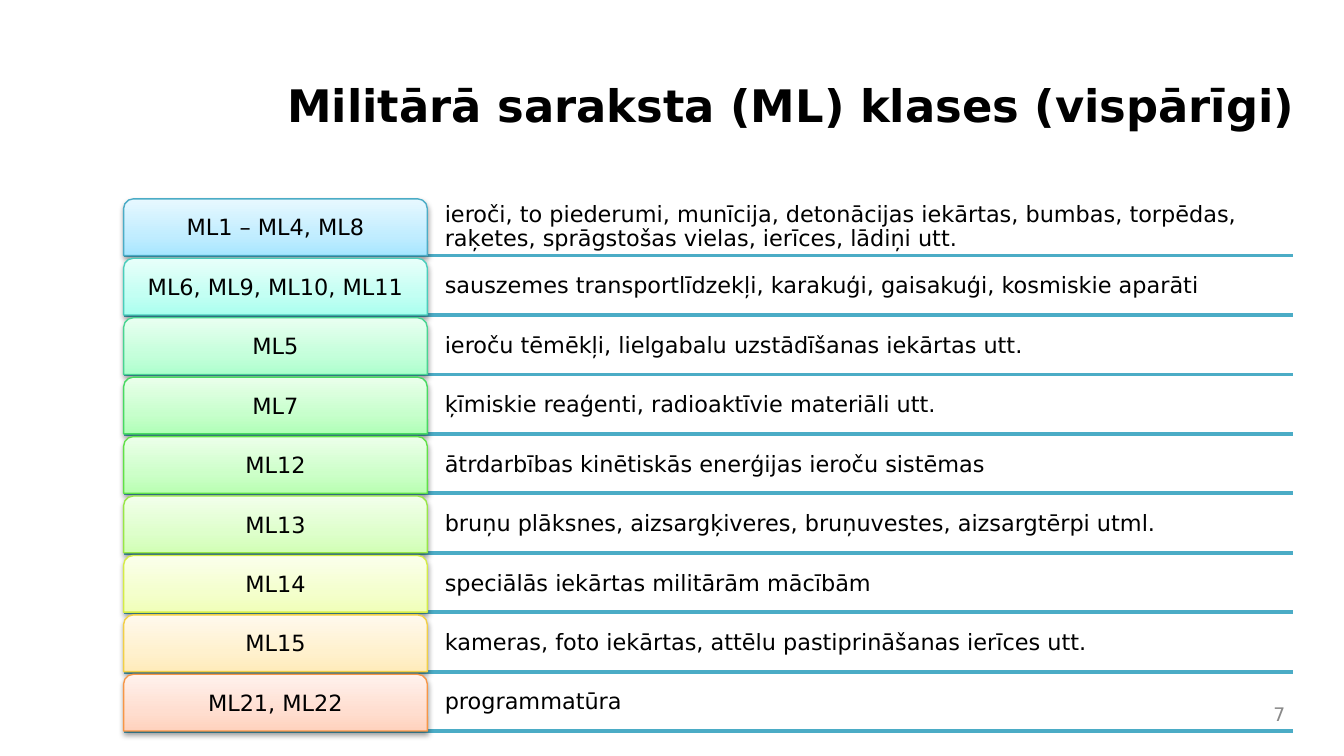
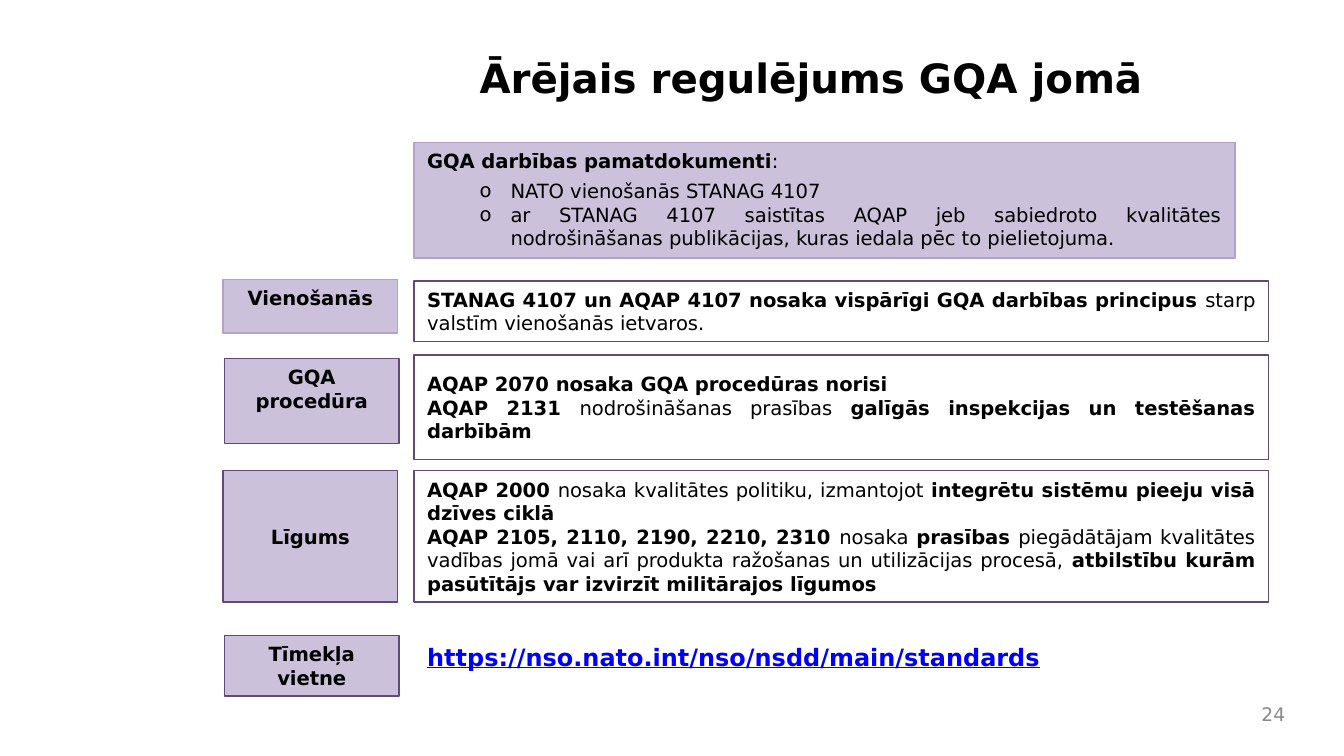
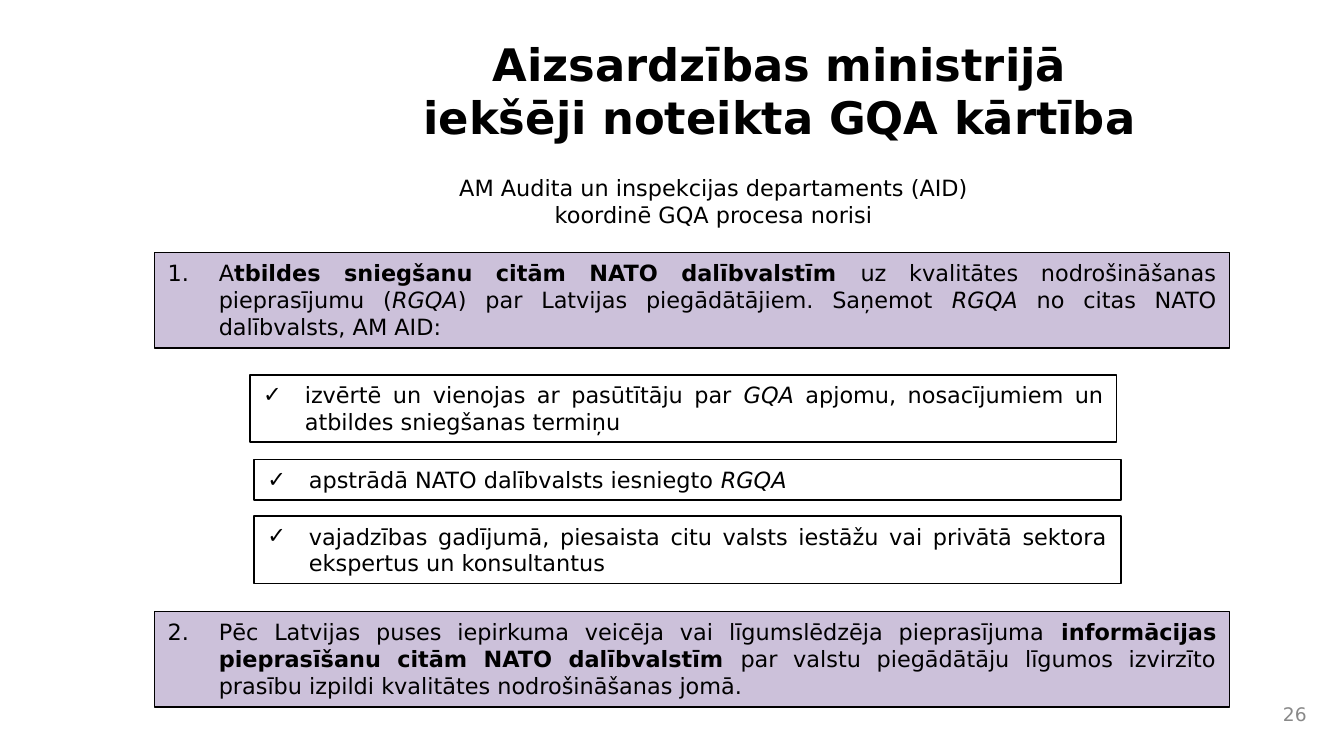
from dataclasses import dataclass

import pptx
import pptx.dml.color
import pptx.enum.shapes
import pptx.enum.text
import pptx.oxml.ns
import pptx.util
from lxml import etree

# Shared look
FONT = "DejaVu Sans"
BLACK, WHITE, GREY = "000000", "FFFFFF", "898989"
LILAC, LILAC_EDGE, PURPLE = "CCC1DA", "B3A2C7", "604A7B"
TEAL, LINK_BLUE = "4BACC6", "0000FF"

# Grid: 100 square columns across the slide, 56.25 rows down
SLIDE_WIDTH = pptx.util.Inches(10)
SLIDE_HEIGHT = SLIDE_WIDTH * 9 // 16
CELL = SLIDE_WIDTH / 100

ALIGN = pptx.enum.text.PP_ALIGN
ANCHOR = pptx.enum.text.MSO_ANCHOR
SHAPE = pptx.enum.shapes.MSO_SHAPE


@dataclass
class Para:
    """Spans are plain strings or (style letters, text) pairs."""
    spans: list
    align: object = ALIGN.JUSTIFY
    bullet: str = ""
    start: int = 0
    indent: float = 0
    hang: float = 0
    level: int = 0
    before: float = 0
    line_spacing: float = 0


def grid(cells):
    return pptx.util.Emu(round(cells * CELL))


def place(left, top, width, height):
    return [grid(cells) for cells in (left, top, width, height)]


def color(code):
    return pptx.dml.color.RGBColor.from_string(code)


def add_xml(parent, tag, **attributes):
    values = {name: str(value) for name, value in attributes.items()}
    return etree.SubElement(parent, pptx.oxml.ns.qn("a:" + tag), values)


def add_rgb(parent, code):
    return add_xml(parent, "srgbClr", val=code)


# Text
def set_bullet(para, item):
    properties = para._p.get_or_add_pPr()
    properties.set("marL", str(grid(item.indent)))
    properties.set("indent", str(-grid(item.hang)))
    if item.start:
        add_xml(properties, "buAutoNum", type="arabicPeriod", startAt=item.start)
    elif item.bullet:
        add_xml(properties, "buFont", typeface=FONT)
        add_xml(properties, "buChar", char=item.bullet)


def add_span(para, text, size, ink, style=""):
    span = para.add_run()
    span.text = text
    font = span.font
    font.name, font.size = FONT, pptx.util.Pt(size)
    font.color.rgb = color(ink)
    font.bold, font.italic, font.underline = ("b" in style, "i" in style, "u" in style)


def write(shape, items, size, ink=BLACK, anchor=ANCHOR.TOP, inset=None):
    frame = shape.text_frame
    frame.word_wrap = True
    frame.vertical_anchor = anchor
    side, edge = (1, 0.5) if inset is None else (inset, inset)
    frame.margin_left = frame.margin_right = grid(side)
    frame.margin_top = frame.margin_bottom = grid(edge)
    for index, item in enumerate(items):
        para = frame.add_paragraph() if index else frame.paragraphs[0]
        set_bullet(para, item)
        para.alignment = item.align
        para.level = item.level
        if item.before:
            para.space_before = pptx.util.Pt(item.before)
        if item.line_spacing:
            para.line_spacing = item.line_spacing
        for span in item.spans:
            style, text = ("", span) if isinstance(span, str) else span
            add_span(para, text, size, ink, style)


def add_text(page, area, items, size, **look):
    box = page.shapes.add_textbox(*place(*area))
    write(box, items, size, **look)


def add_title(page, area, lines, size, align=ALIGN.CENTER, anchor=ANCHOR.TOP):
    box = page.shapes.add_textbox(*place(*area))
    write(box, [Para([], align)], size, anchor=anchor)
    para = box.text_frame.paragraphs[0]
    for index, line in enumerate(lines):
        if index:
            para.add_line_break()
        add_span(para, line, size, BLACK, "b")


def add_page_number(page, number, right=96.6):
    add_text(page, (right - 4.8, 51.9, 4.8, 2.5), [Para([number], ALIGN.RIGHT)],
             10, ink=GREY, anchor=ANCHOR.MIDDLE)


# Shapes
def add_box(page, area, edge, fill=None, kind=SHAPE.RECTANGLE):
    box = page.shapes.add_shape(kind, *place(*area))
    box.shadow.inherit = False
    if fill:
        box.fill.solid()
        box.fill.fore_color.rgb = color(fill)
    else:
        box.fill.background()
    box.line.color.rgb = color(edge)
    box.line.width = pptx.util.Pt(0.75)
    return box


def add_panel(page, area, items, size, edge, fill=None, anchor=ANCHOR.TOP):
    write(add_box(page, area, edge, fill), items, size, anchor=anchor)


def add_rule(page, left, right, top):
    rule = page.shapes.add_connector(
        pptx.enum.shapes.MSO_CONNECTOR.STRAIGHT,
        grid(left), grid(top), grid(right), grid(top))
    rule.line.color.rgb = color(TEAL)
    rule.line.width = pptx.util.Pt(2)
    add_xml(rule._element.spPr, "effectLst")


def add_tab(page, area, label, edge, shades):
    tab = add_box(page, area, edge, kind=SHAPE.ROUND_2_SAME_RECTANGLE)
    tab.adjustments[0], tab.adjustments[1] = 0.17, 0
    properties = tab._element.spPr
    # Gradient running upwards
    tab.fill.gradient()
    gradient = properties.find(pptx.oxml.ns.qn("a:gradFill"))
    for child in list(gradient):
        gradient.remove(child)
    stops = add_xml(gradient, "gsLst")
    for percent, shade in zip((0, 35, 100), shades):
        add_rgb(add_xml(stops, "gs", pos=percent * 1000), shade)
    add_xml(gradient, "lin", ang=270 * 60000, scaled=0)
    # Soft shadow below
    effects = properties.find(pptx.oxml.ns.qn("a:effectLst"))
    shadow = add_xml(effects, "outerShdw", blurRad=pptx.util.Pt(3.1),
                     dist=pptx.util.Pt(1.6), dir=90 * 60000, rotWithShape=0)
    add_xml(add_rgb(shadow, BLACK), "alpha", val=38000)
    write(tab, [Para([label], ALIGN.CENTER, line_spacing=0.9)], 12,
          anchor=ANCHOR.MIDDLE, inset=0.3)


# Slide 1: list of classes
CLASSES = [
    ("ML1 – ML4, ML8",
     "ieroči, to piederumi, munīcija, detonācijas iekārtas, bumbas, torpēdas, "
     "raķetes, sprāgstošas vielas, ierīces, lādiņi utt.",
     TEAL, ("A7E6FF", "C1EDFF", "E7F8FF")),
    ("ML6, ML9, ML10, ML11",
     "sauszemes transportlīdzekļi, karakuģi, gaisakuģi, kosmiskie aparāti",
     "49CDBB", ("AAFFEF", "C3FFF3", "E8FFFA")),
    ("ML5", "ieroču tēmēkļi, lielgabalu uzstādīšanas iekārtas utt.",
     "48D491", ("ADFFCD", "C5FFDB", "E9FFF1")),
    ("ML7", "ķīmiskie reaģenti, radioaktīvie materiāli utt.",
     "47DA61", ("B0FFB7", "C7FFCC", "EAFFEB")),
    ("ML12", "ātrdarbības kinētiskās enerģijas ieroču sistēmas",
     "60E146", ("B9FFB2", "CDFFC9", "ECFFEA")),
    ("ML13", "bruņu plāksnes, aizsargķiveres, bruņuvestes, aizsargtērpi utml.",
     "98E746", ("D1FFB5", "DEFFCB", "F2FFEB")),
    ("ML14", "speciālās iekārtas militārām mācībām",
     "D5EC46", ("F0FFB8", "F4FFCD", "FBFFEC")),
    ("ML15", "kameras, foto iekārtas, attēlu pastiprināšanas ierīces utt.",
     "F2CF46", ("FFEBBA", "FFF1CE", "FFF9ED")),
    ("ML21, ML22", "programmatūra",
     "F79646", ("FFD2BD", "FFDED0", "FFF2ED")),
]


def build_classes(page):
    add_title(page, (20.4, 2, 78, 11.6), ["Militārā saraksta (ML) klases (vispārīgi)"],
              24, ALIGN.LEFT, ANCHOR.MIDDLE)
    left, top, right, list_height = 9.2, 14.8, 96.2, 39.6
    tab_width, gap = 22.6, 0.2
    pitch = (list_height + gap) / len(CLASSES)
    height = pitch - gap
    for row, (label, meaning, edge, shades) in enumerate(CLASSES):
        row_top = top + row * pitch
        add_rule(page, left, right, row_top + height)
        text_left = left + tab_width
        add_text(page, (text_left, row_top, right - text_left, height),
                 [Para([meaning], ALIGN.LEFT, indent=1, line_spacing=0.9)], 12,
                 anchor=ANCHOR.MIDDLE, inset=0.3)
        add_tab(page, (left, row_top, tab_width, height), label, edge, shades)
    add_page_number(page, "7")


# Slide 2: external regulation
def circle_item(text, before=0):
    return Para([text], bullet="o", indent=6.2, hang=2.3, level=1, before=before)


# Label, its left, top, width, height, edge and anchor
LABELS = [
    ("Vienošanās", (16.6, 20.8, 13, 4), LILAC_EDGE, ANCHOR.TOP),
    ("GQA procedūra", (16.7, 26.7, 13, 6.3), PURPLE, ANCHOR.TOP),
    ("Līgums", (16.6, 35, 13, 9.8), PURPLE, ANCHOR.MIDDLE),
    ("Tīmekļa vietne", (16.7, 47.3, 13, 4.5), PURPLE, ANCHOR.TOP),
]

# Top and height of each rule panel, and its text
RULES = [
    (20.9, 4.5, [
        Para([("b", "STANAG 4107 un AQAP 4107 nosaka vispārīgi GQA darbības principus "),
              "starp valstīm vienošanās ietvaros."])]),
    (26.4, 7.8, [
        Para([("b", "AQAP 2070 nosaka GQA procedūras norisi")]),
        Para([("b", "AQAP 2131 "), "nodrošināšanas prasības ",
              ("b", "galīgās inspekcijas un testēšanas darbībām")])]),
    (35, 9.8, [
        Para([("b", "AQAP 2000 "), "nosaka kvalitātes politiku, izmantojot ",
              ("b", "integrētu sistēmu pieeju visā dzīves ciklā")]),
        Para([("b", "AQAP 2105, 2110, 2190, 2210, 2310 "), "nosaka ", ("b", "prasības "),
              "piegādātājam kvalitātes vadības jomā vai arī produkta ražošanas un "
              "utilizācijas procesā, ",
              ("b", "atbilstību kurām pasūtītājs var izvirzīt militārajos līgumos")])]),
]


def build_regulation(page):
    column = 30.8
    add_title(page, (26.3, 3.5, 68.1, 4), ["Ārējais regulējums GQA jomā"], 21.6)
    add_panel(page, (column, 10.6, 61.1, 8.6), [
        Para([("b", "GQA darbības pamatdokumenti"), ":"]),
        circle_item("NATO vienošanās STANAG 4107", before=3.5),
        circle_item("ar STANAG 4107 saistītas AQAP jeb sabiedroto kvalitātes "
                    "nodrošināšanas publikācijas, kuras iedala pēc to pielietojuma."),
    ], 10.5, LILAC_EDGE, LILAC)
    for top, height, items in RULES:
        add_panel(page, (column, top, 63.6, height), items, 10.5, PURPLE,
                  anchor=ANCHOR.MIDDLE)
    for label, area, edge, anchor in LABELS:
        add_panel(page, area, [Para([("b", label)], ALIGN.CENTER)], 10.5, edge, LILAC,
                  anchor)
    add_text(page, (column, 47.3, 54.2, 3.2),
             [Para([("bu", "https://nso.nato.int/nso/nsdd/main/standards")], ALIGN.LEFT)],
             12.8, ink=LINK_BLUE)
    add_page_number(page, "24")


# Slide 3: internal procedure
DUTIES = [
    (18.8, ["A", ("b", "tbildes sniegšanu citām NATO dalībvalstīm "),
            "uz kvalitātes nodrošināšanas pieprasījumu (", ("i", "RGQA"),
            ") par Latvijas piegādātājiem. Saņemot ", ("i", "RGQA "),
            "no citas NATO dalībvalsts, AM AID:"]),
    (45.5, ["Pēc Latvijas puses iepirkuma veicēja vai līgumslēdzēja pieprasījuma ",
            ("b", "informācijas pieprasīšanu citām NATO dalībvalstīm "),
            "par valstu piegādātāju līgumos izvirzīto prasību izpildi kvalitātes "
            "nodrošināšanas jomā."]),
]

# Left, top and height of each step, and its text
STEPS = [
    (18.6, 27.9, 5, ["izvērtē un vienojas ar pasūtītāju par ", ("i", "GQA"),
                     " apjomu, nosacījumiem un atbildes sniegšanas termiņu"]),
    (18.9, 34.2, 3, ["apstrādā NATO dalībvalsts iesniegto ", ("i", "RGQA")]),
    (18.9, 38.4, 5, ["vajadzības gadījumā, piesaista citu valsts iestāžu vai privātā "
                     "sektora ekspertus un konsultantus"]),
]


def build_procedure(page):
    add_title(page, (22.7, 2.2, 70.6, 9.1),
              ["Aizsardzības ministrijā", "iekšēji noteikta GQA kārtība"], 24)
    add_panel(page, (22.7, 12.5, 60.8, 5), [
        Para(["AM Audita un inspekcijas departaments (AID)"], ALIGN.CENTER),
        Para(["koordinē GQA procesa norisi"], ALIGN.CENTER),
    ], 12, WHITE, WHITE)
    for number, (top, spans) in enumerate(DUTIES, 1):
        add_panel(page, (11.5, top, 80, 7.1),
                  [Para(spans, start=number, indent=3.8, hang=3.8)], 12, BLACK, LILAC)
    for left, top, height, spans in STEPS:
        add_panel(page, (left, top, 64.5, height),
                  [Para(spans, bullet="✓", indent=3.1, hang=3.1, level=1)],
                  12, BLACK, WHITE)
    add_page_number(page, "26", right=98.2)


def main():
    deck = pptx.Presentation()
    deck.slide_width, deck.slide_height = SLIDE_WIDTH, SLIDE_HEIGHT
    blank = deck.slide_layouts[6]
    for build in (build_classes, build_regulation, build_procedure):
        build(deck.slides.add_slide(blank))
    deck.save("out.pptx")


if __name__ == "__main__":
    main()
